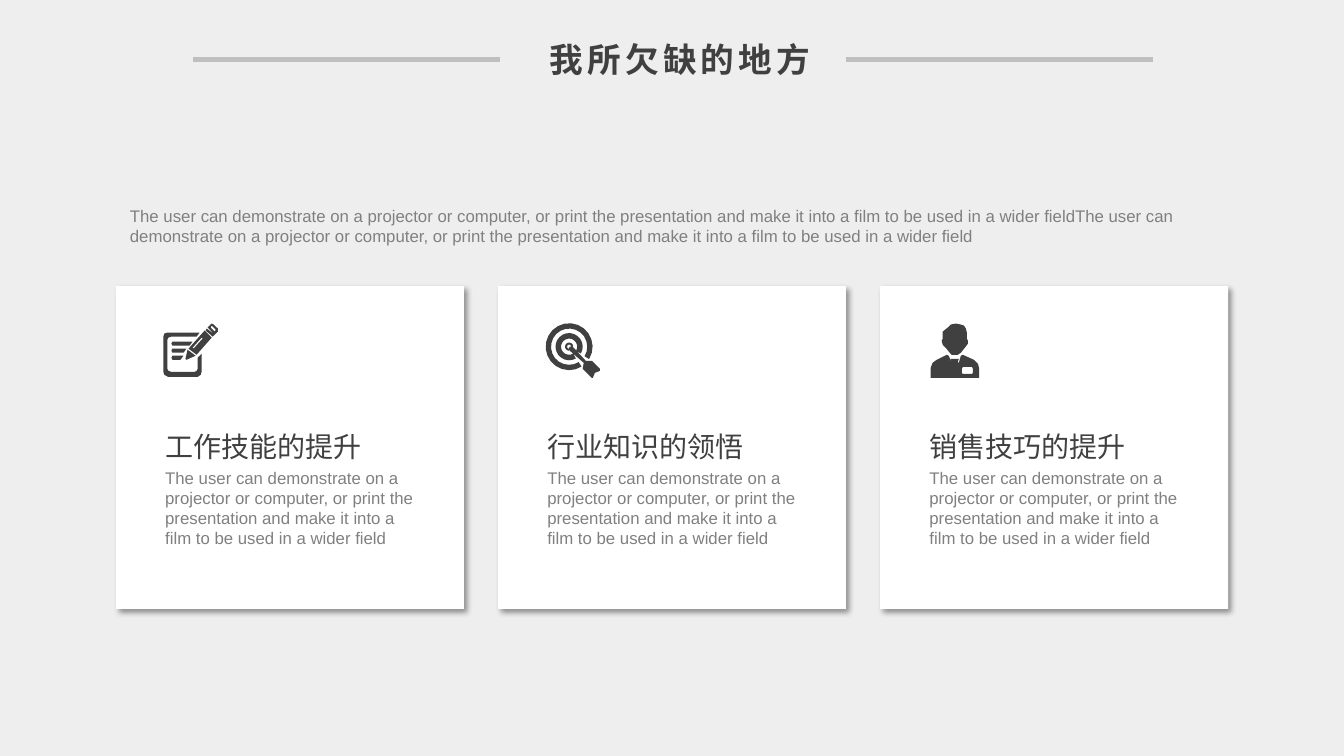
import math

from lxml import etree
from pptx import Presentation
from pptx import util as u
from pptx.dml.color import RGBColor
from pptx.enum import shapes, text
from pptx.oxml import ns

INK, GREY, RULE, WHITE, BACK = "404040", "808080", "BFBFBF", "FFFFFF", "EEEEEE"
HAN, LATIN = "Noto Sans CJK SC", "Arial"
WIDE, HIGH = 13.33, 7.5

BODY = ("The user can demonstrate on a projector or computer, or print the "
        "presentation and make it into a film to be used in a wider field")


def bar(x, y, w):
    """Text line with softened ends."""
    return [(x + 1, y), (x + w, y), (x + w - 3, y + 4), (x + 1, y + 4),
            (x, y + 2)]


def ring(outer, inner, start, stop):
    """Open ring round the target's middle; angles in degrees."""
    turns = [math.radians(start + (stop - start) * i / 20) for i in range(21)]
    rim = [(outer, t) for t in turns] + [(inner, t) for t in reversed(turns)]
    return [(23.5 + r * math.cos(t), 23 + r * math.sin(t)) for r, t in rim]


# Icon outlines in hundredths of an inch; an outline inside another is a hole
NOTE = [
    [(4, 9), (36, 9), (33, 13), (8, 13), (5, 14), (4, 16), (4, 45), (5, 47),
     (8, 48), (31, 48), (33, 47), (34, 45), (34, 34), (38, 30), (38, 48),
     (37, 51), (34, 53), (5, 53), (1, 51), (0, 48), (0, 13), (1, 10)],
    bar(8, 18, 21), bar(8, 25, 15), bar(8, 32, 12),
    [(41, 7), (48, 14), (33, 31), (25, 25)],
    [(38, 14), (39, 15), (30, 25), (29, 24)],
    [(24, 26), (32, 32), (23, 36), (22, 35)],
    [(43, 5), (51, 11), (49, 13), (42, 7)],
    [(48, 0), (50, 1), (54, 5), (54, 8), (51, 11), (44, 4)],
    [(48, 2), (52, 6), (51, 8), (47, 4)],
]
TARGET = [
    ring(23.3, 18, 58, 392), ring(13.5, 8, 60, 390), ring(4, 2, 95, 355),
    [(24, 23), (27, 23), (40, 37), (46, 37), (54, 45), (54, 47),
     (49, 49), (47, 54), (46, 54), (37, 45), (38, 39), (23, 26)],
]
PERSON = [
    [(0, 54), (0, 44), (2, 39), (6, 36), (16, 31), (18, 32), (21, 39),
     (20, 35), (28, 35), (27, 38), (28, 39), (30, 32), (32, 31),
     (43, 36), (47, 40), (48, 44), (48, 54)],
    [(32, 43), (41, 43), (42, 45), (42, 49), (41, 50), (32, 50), (31, 49),
     (31, 45)],
    [(25, 0), (30, 1), (33, 2), (35, 5), (36, 9), (36, 15), (37, 17),
     (37, 20), (34, 24), (30, 29), (27, 31), (21, 31), (19, 29),
     (15, 24), (12, 21), (11, 17), (12, 15), (12, 8), (17, 4), (20, 1)],
]
CARDS = [("工作技能的提升", NOTE, 0.47), ("行业知识的领悟", TARGET, 0.47),
         ("销售技巧的提升", PERSON, 0.5)]


def tint(code):
    return RGBColor.from_string(code)


def paint(shape, code):
    shape.shadow.inherit = False
    shape.fill.solid()
    shape.fill.fore_color.rgb = tint(code)
    shape.line.fill.background()


def write(frame, words, size, face, code):
    """Add one run to the first paragraph."""
    frame.word_wrap = True
    frame.auto_size = text.MSO_AUTO_SIZE.SHAPE_TO_FIT_TEXT
    run = frame.paragraphs[0].add_run()
    run.text = words
    run.font.size = u.Pt(size)
    run.font.name = face
    run.font.color.rgb = tint(code)
    east = etree.SubElement(run.font._element, ns.qn("a:ea"))
    east.set("typeface", face)
    return run


def label(tree, box, *style):
    area = tree.add_textbox(*map(u.Inches, box))
    write(area.text_frame, *style)


def cast(shape):
    """Give a shape a soft shadow towards the lower right."""
    effects = shape._element.spPr.find(ns.qn("a:effectLst"))
    outer = etree.SubElement(effects, ns.qn("a:outerShdw"), blurRad=str(u.Pt(4)),
                             dist=str(u.Pt(3)), dir="2700000", algn="tl",
                             rotWithShape="0")
    black = etree.SubElement(outer, ns.qn("a:srgbClr"), val="000000")
    etree.SubElement(black, ns.qn("a:alpha"), val="40000")


def icon(tree, left, top, rims):
    """Draw all outlines as one shape, in steps of a thousandth of an inch."""
    pen = None
    for rim in rims:
        first, *rest = [(10 * x, 10 * y) for x, y in rim]
        if pen:
            pen.move_to(*first)
        else:
            pen = tree.build_freeform(*first, scale=u.Inches(0.001))
        pen.add_line_segments(rest, close=True)
    paint(pen.convert_to_shape(u.Inches(left), u.Inches(top)), INK)


def card(slide, box, head, rims, inset):
    left, top, wide, high = box
    tree = slide.shapes.add_group_shape().shapes
    panel = tree.add_shape(shapes.MSO_SHAPE.RECTANGLE, *map(u.Inches, box))
    paint(panel, WHITE)
    cast(panel)
    icon(tree, left + inset, top + 0.37, rims)
    column = left + 0.39
    label(tree, (column, top + 1.37, 2.67, 0.44), head, 20, HAN, INK)
    label(tree, (column, top + 1.75, 2.67, 0.91), BODY, 12, LATIN, GREY)


def header(slide, box):
    """Centred title between two rules."""
    left, top, wide, high = box
    title = slide.shapes.title
    title.left, title.top, title.width, title.height = map(
        u.Inches, (left + 3.1, top, 3.47, high))
    frame = title.text_frame
    frame.vertical_anchor = text.MSO_ANCHOR.TOP
    frame.paragraphs[0].alignment = text.PP_ALIGN.CENTER
    run = write(frame, "我所欠缺的地方", 24, HAN, INK)
    run.font.bold = True
    run.font._element.set("spc", "300")
    level, span = top + 0.25, 3.05
    for start in (left, left + wide - span):
        rule = slide.shapes.add_connector(
            shapes.MSO_CONNECTOR.STRAIGHT,
            *map(u.Inches, (start, level, start + span, level)))
        rule.line.color.rgb = tint(RULE)
        rule.line.width = u.Pt(3)
        etree.SubElement(rule._element.spPr, ns.qn("a:effectLst"))


def deck(slide, box):
    """Equal cards with equal gaps across the box."""
    left, top, wide, high = box
    width = 3.45
    pitch = (wide - width) / (len(CARDS) - 1)
    for i, entry in enumerate(CARDS):
        card(slide, (left + i * pitch, top, width, high), *entry)


def main():
    show = Presentation()
    show.slide_width, show.slide_height = u.Inches(WIDE), u.Inches(HIGH)
    slide = show.slides.add_slide(show.slide_layouts[5])
    slide.background.fill.solid()
    slide.background.fill.fore_color.rgb = tint(BACK)
    header(slide, (1.91, 0.34, 9.53, 0.5))
    label(slide.shapes, (1.19, 1.99, 10.98, 0.5), BODY * 2, 12, LATIN, GREY)
    deck(slide, (1.15, 2.84, 11.03, 3.2))
    show.save("out.pptx")


if __name__ == "__main__":
    main()
